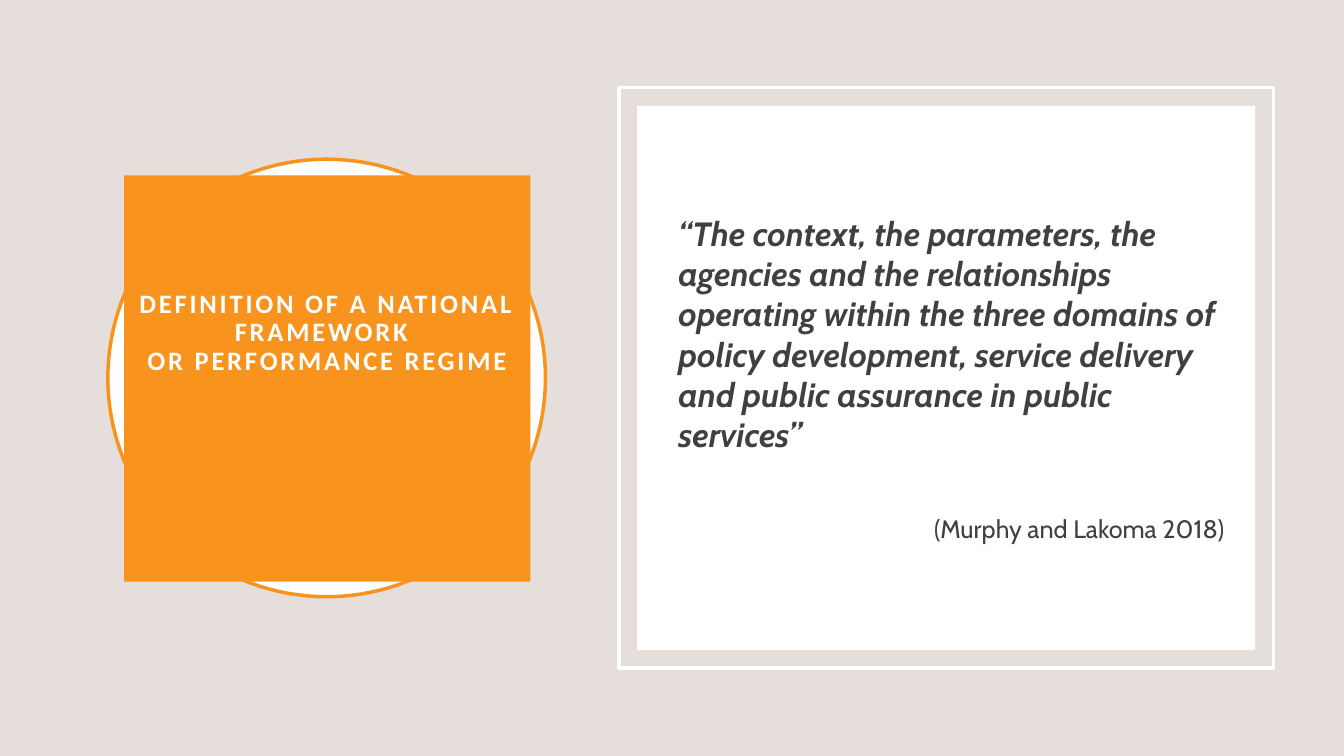
from pptx import Presentation
from pptx import util as u
from pptx.dml.color import RGBColor
from pptx.enum import shapes, text

SAND = RGBColor(0xE5, 0xDE, 0xDB)
ORANGE = RGBColor(0xF8, 0x93, 0x1D)
WHITE = RGBColor(0xFF, 0xFF, 0xFF)
GREY = RGBColor(0x40, 0x40, 0x40)
KIND = shapes.MSO_SHAPE
ALIGN = text.PP_ALIGN

HEAD = {"name": "Calibri", "size": u.Pt(19), "bold": True, "italic": False}
QUOTE = {"name": "Cabin", "size": u.Pt(24), "bold": True, "italic": True}
CITE = {"name": "Cabin", "size": u.Pt(18), "bold": False, "italic": False}


def apply(item, style):
    for key, value in style.items():
        setattr(item, key, value)


class Deck:
    def __init__(self):
        self.file = Presentation()
        apply(self.file, {"slide_width": u.Inches(13.33), "slide_height": u.Inches(7.5)})
        self.slide = self.file.slides.add_slide(self.file.slide_layouts[5])
        self.paint(self.slide.background.fill, SAND)

    def paint(self, fill, color):
        if color is None:
            fill.background()
        else:
            fill.solid()
            fill.fore_color.rgb = color

    def shape(self, kind, box, fill=None, line=None):
        item = self.slide.shapes.add_shape(kind, *map(u.Inches, box))
        item.shadow.inherit = False
        self.paint(item.fill, fill)
        self.paint(item.line.fill, line)
        if line is not None:
            item.line.width = u.Pt(2.5)

    def frame(self, item, side, top, bottom):
        apply(item.text_frame, {
            "word_wrap": True,
            "auto_size": text.MSO_AUTO_SIZE.NONE,
            "vertical_anchor": text.MSO_ANCHOR.MIDDLE,
            "margin_left": u.Inches(side), "margin_right": u.Inches(side),
            "margin_top": u.Inches(top), "margin_bottom": u.Inches(bottom),
        })

    def letter(self, para, words, font, color, form):
        para.text = words
        apply(para, form)
        for run in para.runs:
            apply(run.font, font)
            run.font.color.rgb = color

    def title(self, box, words):
        item = self.slide.shapes.title
        apply(item, dict(zip(("left", "top", "width", "height"), map(u.Inches, box))))
        self.slide.shapes._spTree.append(item._element)
        self.paint(item.fill, ORANGE)
        self.frame(item, 0.15, 0.2, 1.1)
        para = item.text_frame.paragraphs[0]
        form = {"alignment": ALIGN.CENTER, "line_spacing": 0.9, "space_before": u.Pt(0)}
        self.letter(para, words, HEAD, WHITE, form)
        for run in para.runs:
            run._r.get_or_add_rPr().set("spc", "200")

    def body(self, box, parts):
        item = self.slide.shapes.add_textbox(*map(u.Inches, box))
        self.frame(item, 0.1, 0.05, 0.05)
        area = item.text_frame
        for i, (words, font, align, gap) in enumerate(parts):
            para = area.add_paragraph() if i else area.paragraphs[0]
            self.letter(para, words, font, GREY, {"alignment": align, "space_before": u.Pt(gap)})


def main():
    deck = Deck()
    deck.shape(KIND.OVAL, (1.07, 1.58, 4.34, 4.34), WHITE, ORANGE)
    deck.title((1.23, 1.74, 4.03, 4.03),
               "DEFINITION OF A NATIONAL FRAMEWORK \vOR PERFORMANCE REGIME")
    deck.shape(KIND.RECTANGLE, (6.14, 0.87, 6.49, 5.76), line=WHITE)
    deck.shape(KIND.RECTANGLE, (6.32, 1.05, 6.13, 5.4), WHITE)
    deck.body((6.63, 1.58, 5.61, 4.34), [
        ("“The context, the parameters, the agencies and the relationships operating "
         "within the three domains of policy development, service delivery and public "
         "assurance in public services”", QUOTE, ALIGN.LEFT, 0),
        ("(Murphy and Lakoma 2018)", CITE, ALIGN.RIGHT, 42),
    ])
    deck.file.save("out.pptx")


if __name__ == "__main__":
    main()
